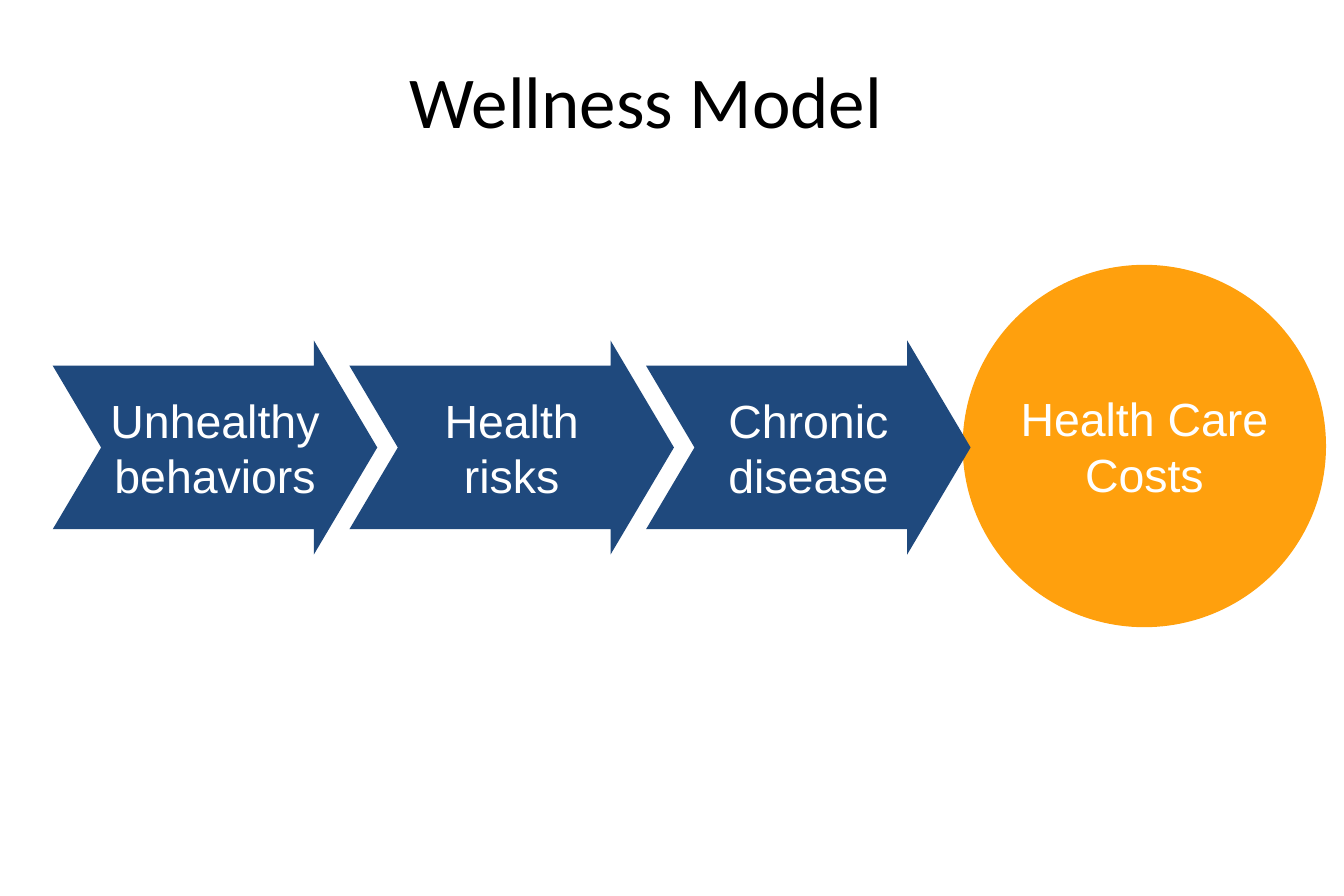
from pptx import Presentation
from pptx.dml.color import RGBColor
from pptx.enum.shapes import MSO_SHAPE
from pptx.enum.text import MSO_ANCHOR, PP_ALIGN
from pptx.util import Emu, Pt

# Content
TITLE = ["Wellness Model"]
STAGES = [
    ["Unhealthy", "behaviors"],
    ["Health", "risks"],
    ["Chronic", "disease"],
]
OUTCOME = ["Health Care", "Costs"]

# Layout in px, 120 to the inch
SCALE = 7620
SLIDE_W, SLIDE_H = 1350, 900
TITLE_BOX = (42, 25, 1214, 150)
CIRCLE_BOX = (967, 266, 365, 364)
ARROW_X, ARROW_Y, ARROW_W, ARROW_H = 53, 342, 326, 215
ARROW_PITCH = 298
ARROW_ADJ = (0.764, 0.296)

# Style
NAVY = RGBColor(0x1F, 0x49, 0x7D)
ORANGE = RGBColor(0xFF, 0xA0, 0x0D)
WHITE = RGBColor(0xFF, 0xFF, 0xFF)
BLACK = RGBColor(0x00, 0x00, 0x00)
OVAL, ARROW = MSO_SHAPE.OVAL, MSO_SHAPE.NOTCHED_RIGHT_ARROW
CENTER, MIDDLE = PP_ALIGN.CENTER, MSO_ANCHOR.MIDDLE


def px(box):
    return [Emu(v * SCALE) for v in box]


def write(sp, lines, font, size, color, wrap):
    tf = sp.text_frame
    tf.word_wrap = wrap
    tf.vertical_anchor = MIDDLE
    p = tf.paragraphs[0]
    p.alignment = CENTER
    for i, line in enumerate(lines):
        if i:
            p.add_line_break()
        r = p.add_run()
        r.text = line
        r.font.name = font
        r.font.size = Pt(size)
        r.font.color.rgb = color
    p.font.size = Pt(size)


def add_block(s, kind, box, fill, lines):
    sp = s.shapes.add_shape(kind, *px(box))
    sp.shadow.inherit = False
    sp.fill.solid()
    sp.fill.fore_color.rgb = fill
    sp.line.fill.background()
    write(sp, lines, "Arial", 28, WHITE, False)
    return sp


def main():
    prs = Presentation()
    prs.slide_width, prs.slide_height = px((SLIDE_W, SLIDE_H))
    s = prs.slides.add_slide(prs.slide_layouts[6])

    # Outcome circle, behind the last arrow
    add_block(s, OVAL, CIRCLE_BOX, ORANGE, OUTCOME)

    # Stage arrows
    for i, lines in enumerate(STAGES):
        box = (ARROW_X + i * ARROW_PITCH, ARROW_Y, ARROW_W, ARROW_H)
        sp = add_block(s, ARROW, box, NAVY, lines)
        sp.adjustments[0], sp.adjustments[1] = ARROW_ADJ

    # Title
    title = s.shapes.add_textbox(*px(TITLE_BOX))
    write(title, TITLE, "Calibri", 44, BLACK, True)

    prs.save("out.pptx")


if __name__ == "__main__":
    main()
